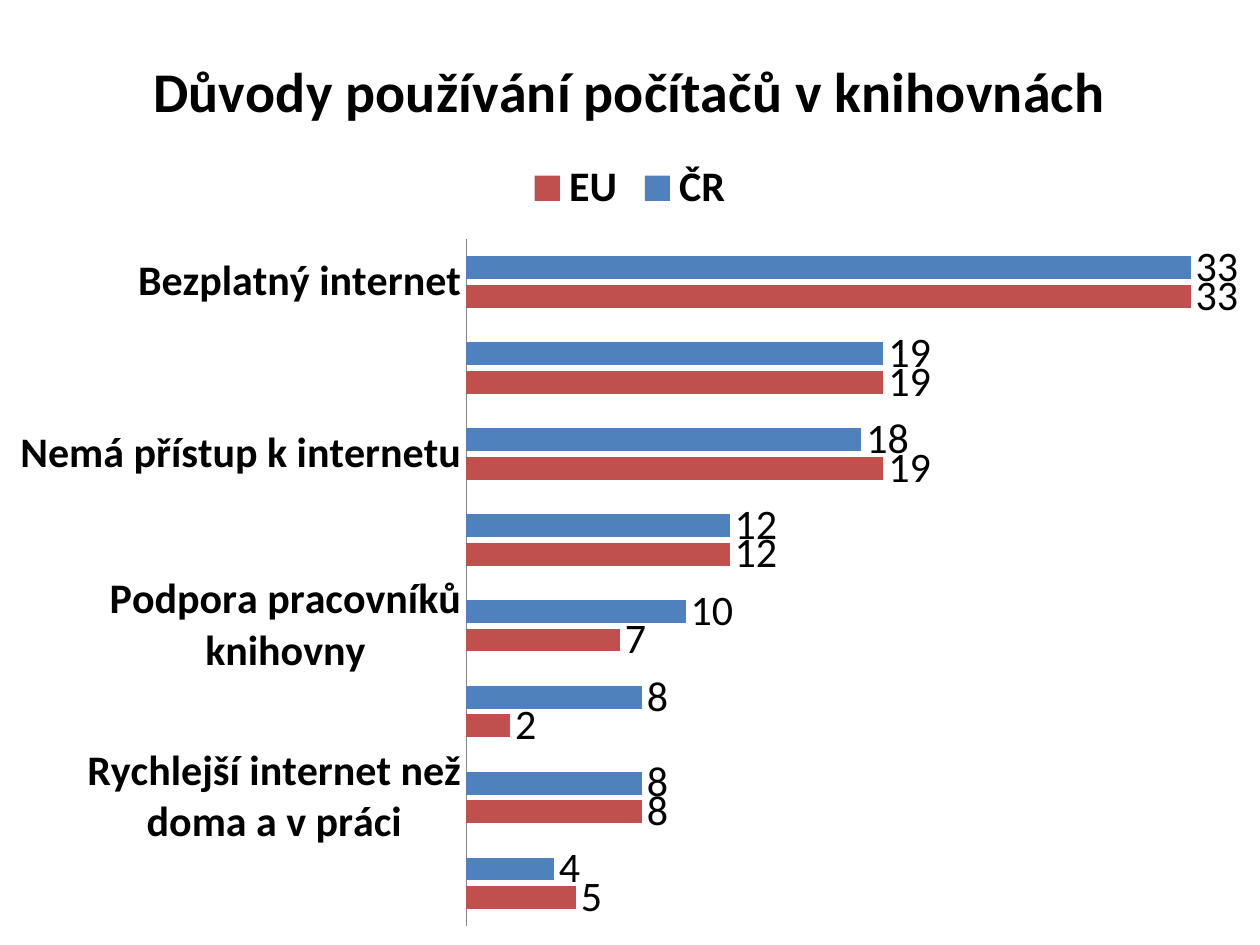
from lxml import etree
from pptx import Presentation
from pptx.chart.data import CategoryChartData
from pptx.dml.color import RGBColor
from pptx.enum.chart import (XL_CHART_TYPE, XL_LABEL_POSITION,
                             XL_LEGEND_POSITION, XL_TICK_MARK)
from pptx.oxml.ns import qn
from pptx.util import Pt

BAR = XL_CHART_TYPE.BAR_CLUSTERED
LEGEND_TOP = XL_LEGEND_POSITION.TOP
LABEL_END = XL_LABEL_POSITION.OUTSIDE_END
NO_TICK = XL_TICK_MARK.NONE

BLACK = RGBColor(0x00, 0x00, 0x00)
GRAY = RGBColor(0x86, 0x86, 0x86)
BLUE = RGBColor(0x4F, 0x81, 0xBD)
RED = RGBColor(0xC0, 0x50, 0x4D)

REASONS = [  # reason, ČR, EU
    ("Bezplatný internet", 33, 33),
    ("Nemá počítač", 19, 19),
    ("Nemá přístup k internetu", 18, 19),
    ("K práci a ke sdílení s přáteli", 12, 12),
    ("Podpora pracovníků knihovny", 10, 7),
    ("Pomoc od ostatních uřživatelů", 8, 2),
    ("Rychlejší internet než doma a v práci", 8, 8),
    ("Lepší HW než doma a v práci", 4, 5),
]


class SlideBuilder:
    font_name = "Calibri"
    text_size = 24
    title_size = 32

    def __init__(self, slide):
        self.s = slide

    def style(self, font, size, bold=False):
        font.name = self.font_name
        font.size = Pt(size)
        font.bold = bold
        font.color.rgb = BLACK

    def bar_chart(self, title, rows, series, x, y, w, h):
        data = CategoryChartData(number_format="0")
        names, *columns = zip(*rows)
        data.categories = names
        for (name, _), values in zip(series, columns):
            data.add_series(name, values)
        chart = self.s.shapes.add_chart(
            BAR, Pt(x), Pt(y), Pt(w), Pt(h), data).chart
        self.style(chart.font, self.text_size)

        # Title and legend
        tf = chart.chart_title.text_frame
        tf.text = title
        self.style(tf.paragraphs[0].runs[0].font, self.title_size, True)
        chart.chart_title.include_in_layout = False
        chart.has_legend = True
        chart.legend.position = LEGEND_TOP
        chart.legend.include_in_layout = False
        self.style(chart.legend.font, self.text_size, True)

        # Axes
        axis = chart.category_axis
        axis.reverse_order = True
        axis.major_tick_mark = NO_TICK
        axis.format.line.color.rgb = GRAY
        self.style(axis.tick_labels.font, self.text_size, True)
        axis = chart.value_axis
        axis.visible = False
        axis.has_major_gridlines = False
        axis.minimum_scale, axis.maximum_scale = 0, 35

        # Bars and their values
        plot = chart.plots[0]
        plot.gap_width = 150
        plot.overlap = -25
        plot.vary_by_categories = False
        for bars, (_, color) in zip(plot.series, series):
            bars.format.fill.solid()
            bars.format.fill.fore_color.rgb = color
            labels = bars.data_labels
            labels.show_value = True
            labels.position = LABEL_END
            self.style(labels.font, self.text_size)
        return chart

    def place_plot(self, chart, x, y, w, h):
        """Fix the inner plot area, in fractions of the chart."""
        area = chart.plots[0]._element.getparent()
        for old in area.findall(qn("c:layout")):
            area.remove(old)
        layout = etree.Element(qn("c:layout"))
        area.insert(0, layout)
        manual = etree.SubElement(layout, qn("c:manualLayout"))
        settings = (("layoutTarget", "inner"), ("xMode", "edge"),
                    ("yMode", "edge"), ("x", x), ("y", y), ("w", w), ("h", h))
        for tag, value in settings:
            etree.SubElement(manual, qn(f"c:{tag}")).set("val", str(value))


def main():
    prs = Presentation()
    prs.slide_width, prs.slide_height = Pt(720), Pt(540)
    builder = SlideBuilder(prs.slides.add_slide(prs.slide_layouts[6]))

    # Reasons for using library computers
    chart = builder.bar_chart(
        "Důvody používání počítačů v\u00a0knihovnách", REASONS,
        [("ČR", BLUE), ("EU", RED)], 0, 9.4, 720, 530.6)
    builder.place_plot(chart, 0.37, 0.24, 0.61, 0.74)

    prs.save("out.pptx")


if __name__ == "__main__":
    main()
